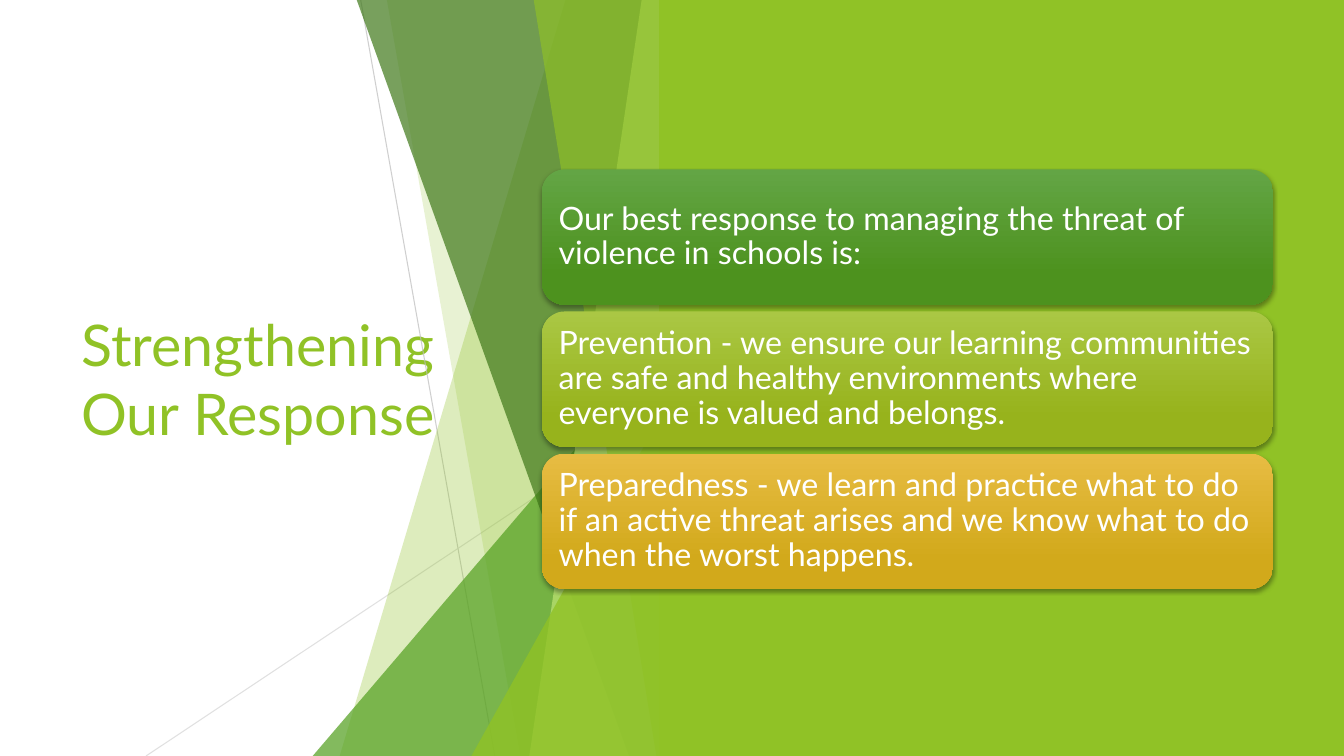
from dataclasses import dataclass

from lxml.etree import SubElement
from pptx import Presentation
from pptx.dml.color import RGBColor
from pptx.enum.shapes import MSO_CONNECTOR as Connector, MSO_SHAPE as Shape
from pptx.enum.text import MSO_ANCHOR as Anchor, PP_ALIGN as Align
from pptx.oxml.ns import qn
from pptx.util import Cm, Pt

WIDTH, HEIGHT = 33.87, 19.05
FACET_RIGHT = WIDTH / 2


@dataclass(frozen=True)
class Theme:
    font: str = "Lato"
    title_size: float = 41
    card_size: float = 23
    hairline: float = 0.75
    white: str = "FFFFFF"
    lime: str = "90C226"
    pale_lime: str = "C0E474"
    green: str = "54A021"
    dark_green: str = "3F7819"
    gray: str = "BFBFBF"
    light_gray: str = "D9D9D9"
    shadow: str = "000000"
    card_gradients: tuple = (
        ("63A545", "4D921E"),
        ("AAC744", "97B31C"),
        ("E7BC43", "D2A91B"),
    )


THEME = Theme()

# Crossing hairlines: start, end, colour, opacity
HAIRLINES = [
    ((9.09, 0), (12.47, HEIGHT), THEME.gray, 75),
    ((16.92, 10.24), (3.68, HEIGHT), THEME.light_gray, 80),
]

# Bands reach from a slanted left edge to FACET_RIGHT: top x, bottom x, colour, opacity
BACK_BANDS = [(14.25, 8.56, THEME.lime, 30), (9.75, 13.11, THEME.lime, 20)]
FRONT_BANDS = [
    (8.99, 15.85, THEME.dark_green, 70),
    (16.17, 13.34, THEME.pale_lime, 70),
    (13.45, 16.54, THEME.lime, 65),
]

CARD_TEXTS = [
    "Our best response to managing the threat of violence in schools is:",
    "Prevention - we ensure our learning communities are safe and healthy "
    "environments where everyone is valued and belongs.",
    "Preparedness - we learn and practice what to do if an active threat arises "
    "and we know what to do when the worst happens.",
]
CARD_LEFT, CARD_TOP, CARD_WIDTH, CARD_HEIGHT = 13.66, 4.27, 18.42, 3.41
CARD_PITCH = 3.58


def set_attributes(target, values):
    for name, value in values.items():
        setattr(target, name, value)


def set_opacity(element, percent):
    """Make every plain colour inside the element see-through."""
    for color in element.iter(qn("a:srgbClr")):
        SubElement(color, qn("a:alpha"), val=str(percent * 1000))


class SlideBuilder:
    def __init__(self, slide, theme):
        self.slide = slide
        self.theme = theme
        self.shapes = slide.shapes

    def start_group(self):
        self.shapes = self.slide.shapes.add_group_shape().shapes

    def end_group(self):
        self.shapes = self.slide.shapes

    def paint(self, shape, color, opacity=100):
        shape.shadow.inherit = False
        shape.fill.solid()
        shape.fill.fore_color.rgb = RGBColor.from_string(color)
        shape.line.fill.background()
        if opacity < 100:
            set_opacity(shape._element.spPr, opacity)

    def hairline(self, start, end, color, opacity):
        line = self.shapes.add_connector(
            Connector.STRAIGHT, *(Cm(value) for value in start + end)
        )
        line.line.width = Pt(self.theme.hairline)
        line.line.color.rgb = RGBColor.from_string(color)
        properties = line._element.spPr
        set_opacity(properties, opacity)
        SubElement(properties, qn("a:effectLst"))

    def band(self, top_x, bottom_x, color, opacity):
        builder = self.shapes.build_freeform(Cm(top_x), 0)
        corners = [(FACET_RIGHT, 0), (FACET_RIGHT, HEIGHT), (bottom_x, HEIGHT)]
        builder.add_line_segments([(Cm(x), Cm(y)) for x, y in corners], close=True)
        self.paint(builder.convert_to_shape(), color, opacity)

    def corner_triangle(self, left, top, color, opacity):
        """Right triangle filling the lower right corner of the facets."""
        triangle = self.shapes.add_shape(
            Shape.ISOSCELES_TRIANGLE,
            Cm(left), Cm(top), Cm(FACET_RIGHT - left), Cm(HEIGHT - top),
        )
        triangle.adjustments[0] = 1
        self.paint(triangle, color, opacity)

    def panel(self, left, color):
        panel = self.shapes.add_shape(
            Shape.RECTANGLE, Cm(left), 0, Cm(WIDTH - left), Cm(HEIGHT)
        )
        self.paint(panel, color)

    def fill_text(self, frame, text, size, color, line_spacing):
        set_attributes(frame, {"word_wrap": True, "vertical_anchor": Anchor.MIDDLE})
        paragraph = frame.paragraphs[0]
        set_attributes(
            paragraph, {"alignment": Align.LEFT, "line_spacing": line_spacing}
        )
        run = paragraph.add_run()
        run.text = text
        set_attributes(run.font, {"name": self.theme.font, "size": Pt(size)})
        run.font.color.rgb = RGBColor.from_string(color)

    def title(self, text, left, top, width, height):
        box = self.shapes.add_textbox(Cm(left), Cm(top), Cm(width), Cm(height))
        self.fill_text(
            box.text_frame, text, self.theme.title_size, self.theme.lime, 1.0
        )

    def card(self, text, top, gradient):
        card = self.shapes.add_shape(
            Shape.ROUNDED_RECTANGLE,
            Cm(CARD_LEFT), Cm(top), Cm(CARD_WIDTH), Cm(CARD_HEIGHT),
        )
        card.fill.gradient()
        card.fill.gradient_angle = 270
        for stop, color, position in zip(card.fill.gradient_stops, gradient, (0, 0.78)):
            stop.color.rgb = RGBColor.from_string(color)
            stop.position = position
        card.line.fill.background()
        self.drop_shadow(card)
        margins = ("margin_left", "margin_top", "margin_right", "margin_bottom")
        set_attributes(card.text_frame, dict.fromkeys(margins, Cm(0.25)))
        self.fill_text(
            card.text_frame, text, self.theme.card_size, self.theme.white, 0.9
        )

    def drop_shadow(self, shape):
        shape.shadow.inherit = False
        effects = shape._element.spPr.find(qn("a:effectLst"))
        shadow = SubElement(
            effects, qn("a:outerShdw"), blurRad=str(Pt(3)), dist=str(Pt(2)),
            dir="5400000", rotWithShape="0",
        )
        SubElement(shadow, qn("a:srgbClr"), val=self.theme.shadow)
        set_opacity(shadow, 35)


def main():
    presentation = Presentation()
    set_attributes(
        presentation, {"slide_width": Cm(WIDTH), "slide_height": Cm(HEIGHT)}
    )
    slide = presentation.slides.add_slide(presentation.slide_layouts[6])
    builder = SlideBuilder(slide, THEME)

    builder.title("Strengthening Our Response", 1.8, 3.84, 9.86, 11.38)

    builder.start_group()
    for hairline in HAIRLINES:
        builder.hairline(*hairline)
    for band in BACK_BANDS:
        builder.band(*band)
    builder.corner_triangle(7.88, 8.46, THEME.green, 72)
    for band in FRONT_BANDS:
        builder.band(*band)
    builder.corner_triangle(11.88, 9.98, THEME.lime, 80)
    builder.end_group()

    builder.panel(16.61, THEME.lime)
    for index, (text, gradient) in enumerate(zip(CARD_TEXTS, THEME.card_gradients)):
        builder.card(text, CARD_TOP + index * CARD_PITCH, gradient)

    presentation.save("out.pptx")


if __name__ == "__main__":
    main()
